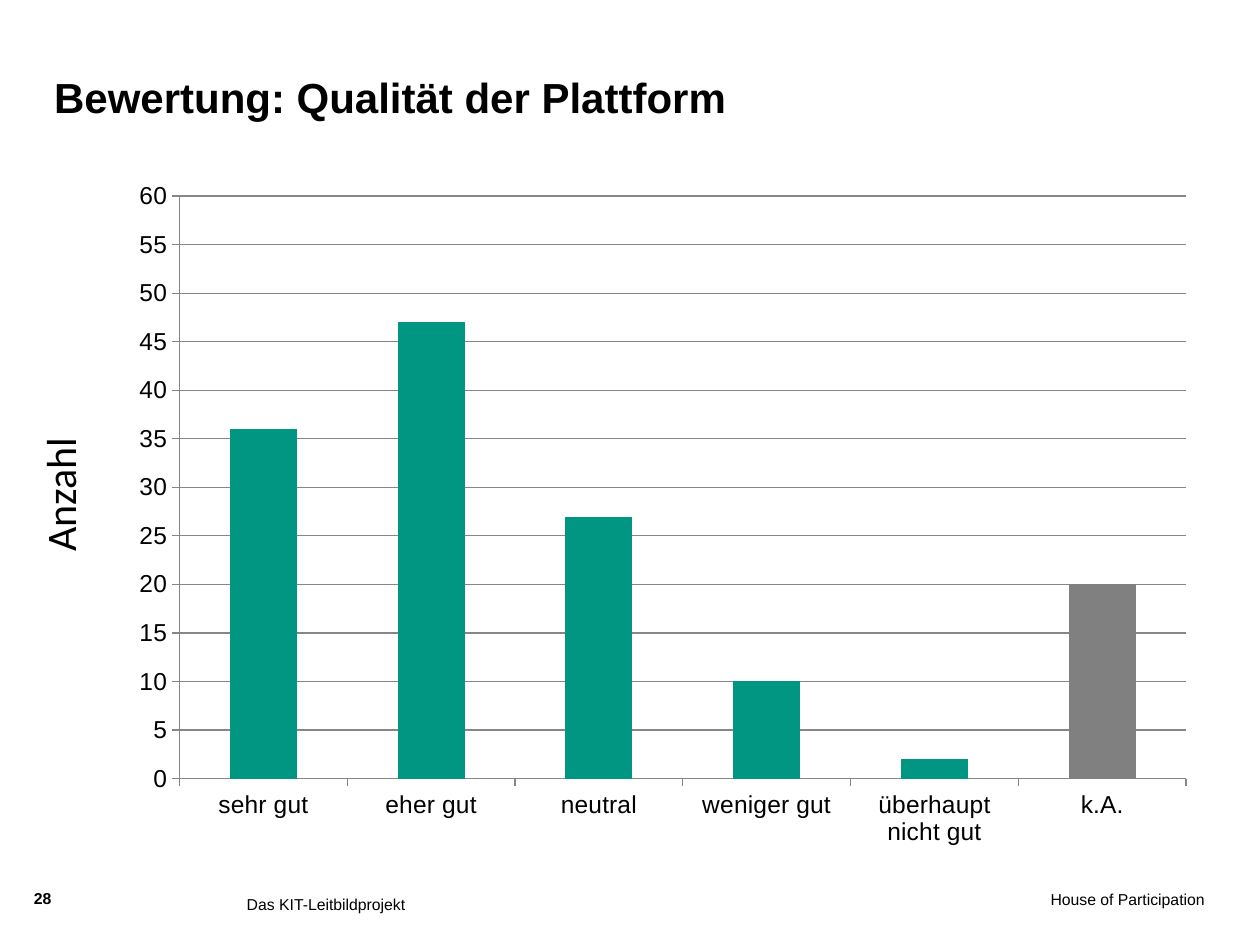
from dataclasses import dataclass

from lxml.etree import SubElement
from pptx import Presentation
from pptx.chart.data import CategoryChartData
from pptx.dml.color import RGBColor
from pptx.enum.chart import XL_CHART_TYPE as ChartType, XL_TICK_MARK as Tick
from pptx.enum.text import MSO_ANCHOR as Anchor, PP_ALIGN as Align
from pptx.oxml.ns import qn
from pptx.util import Inches, Pt


@dataclass(frozen=True)
class Theme:
    font: str = "Arial"
    axis_title_font: str = "Calibri"
    ink: RGBColor = RGBColor(0, 0, 0)
    rating: RGBColor = RGBColor(0x00, 0x96, 0x82)
    no_answer: RGBColor = RGBColor(0x80, 0x80, 0x80)
    axis_line: RGBColor = RGBColor(0x86, 0x86, 0x86)
    title_size: Pt = Pt(24)
    axis_size: Pt = Pt(14)
    footer_size: Pt = Pt(9)


THEME = Theme()


@dataclass(frozen=True)
class Label:
    text: str
    left: float
    top: float
    width: float
    height: float
    size: Pt = THEME.footer_size
    font: str = THEME.font
    bold: bool = False
    align: Align = Align.LEFT
    anchor: Anchor = Anchor.TOP
    inset_x: float = 0
    inset_y: float = 0
    rotation: float = 0


LABELS = [
    Label("House of Participation", 6.57, 7.06, 2.99, 0.39, align=Align.RIGHT),
    Label("28", 0.27, 7.05, 0.36, 0.24, bold=True),
    Label("Das KIT-Leitbildprojekt", 1.86, 7.05, 4.65, 0.39, inset_x=0.1, inset_y=0.05),
    Label("Bewertung: Qualität der Plattform", 0.43, 0.36, 7.56, 0.61,
          size=THEME.title_size, bold=True, anchor=Anchor.BOTTOM),
    Label("Anzahl", -0.24, 3.24, 1.65, 0.63, size=THEME.title_size,
          font=THEME.axis_title_font, rotation=270),
]

RATINGS = {
    "sehr gut": 36,
    "eher gut": 47,
    "neutral": 27,
    "weniger gut": 10,
    "überhaupt nicht gut": 2,
    "k.A.": 20,
}


def add_label(slide, label: Label) -> None:
    """Draw one text label."""
    box = slide.shapes.add_textbox(Inches(label.left), Inches(label.top),
                                   Inches(label.width), Inches(label.height))
    box.rotation = label.rotation
    frame = box.text_frame
    frame.word_wrap = True
    frame.vertical_anchor = label.anchor
    frame.margin_left = frame.margin_right = Inches(label.inset_x)
    frame.margin_top = frame.margin_bottom = Inches(label.inset_y)
    paragraph = frame.paragraphs[0]
    paragraph.alignment = label.align
    run = paragraph.add_run()
    run.text = label.text
    run.font.name = label.font
    run.font.size = label.size
    run.font.bold = label.bold
    run.font.color.rgb = THEME.ink


def style_line(line) -> None:
    """Give an axis or gridline its thin grey stroke."""
    line.color.rgb = THEME.axis_line
    line.width = Pt(0.75)


def place_plot(chart, x: float, y: float, w: float, h: float) -> None:
    """Fix the inner plot area as fractions of the chart."""
    plot_area = chart.plots[0]._element.getparent()
    layout = plot_area.find(qn("c:layout"))
    if layout is None:
        layout = SubElement(plot_area, qn("c:layout"))
        plot_area.insert(0, layout)
    manual = SubElement(layout, qn("c:manualLayout"))
    settings = {"layoutTarget": "inner", "xMode": "edge", "yMode": "edge",
                "x": x, "y": y, "w": w, "h": h}
    for tag, value in settings.items():
        SubElement(manual, qn(f"c:{tag}")).set("val", str(value))


def add_rating_chart(slide) -> None:
    """Draw the column chart of platform ratings."""
    data = CategoryChartData()
    data.categories = list(RATINGS)
    data.add_series("Anzahl", list(RATINGS.values()))
    chart = slide.shapes.add_chart(ChartType.COLUMN_CLUSTERED, Inches(0.91), Inches(1.39),
                                   Inches(8.59), Inches(5.57), data).chart
    chart.has_legend = False
    chart.has_title = False
    chart.font.name = THEME.font
    chart.font.size = THEME.axis_size
    chart.font.color.rgb = THEME.ink

    counts = chart.value_axis
    counts.minimum_scale, counts.maximum_scale, counts.major_unit = 0, 60, 5
    counts.has_major_gridlines = True
    style_line(counts.major_gridlines.format.line)
    for axis in (chart.category_axis, counts):
        axis.major_tick_mark = Tick.OUTSIDE
        axis.tick_labels.font.size = THEME.axis_size
        style_line(axis.format.line)

    plot = chart.plots[0]
    plot.gap_width = 150
    plot.vary_by_categories = False
    series = plot.series[0]
    no_answer = series.points[len(RATINGS) - 1]
    for bars, color in ((series, THEME.rating), (no_answer, THEME.no_answer)):
        bars.format.fill.solid()
        bars.format.fill.fore_color.rgb = color
    place_plot(chart, 0.06, 0.03, 0.93, 0.83)


def main() -> None:
    """Build the slide and save it."""
    deck = Presentation()
    deck.slide_width, deck.slide_height = Inches(10), Inches(7.5)
    slide = deck.slides.add_slide(deck.slide_layouts[6])
    add_rating_chart(slide)
    for label in LABELS:
        add_label(slide, label)
    deck.save("out.pptx")


if __name__ == "__main__":
    main()
